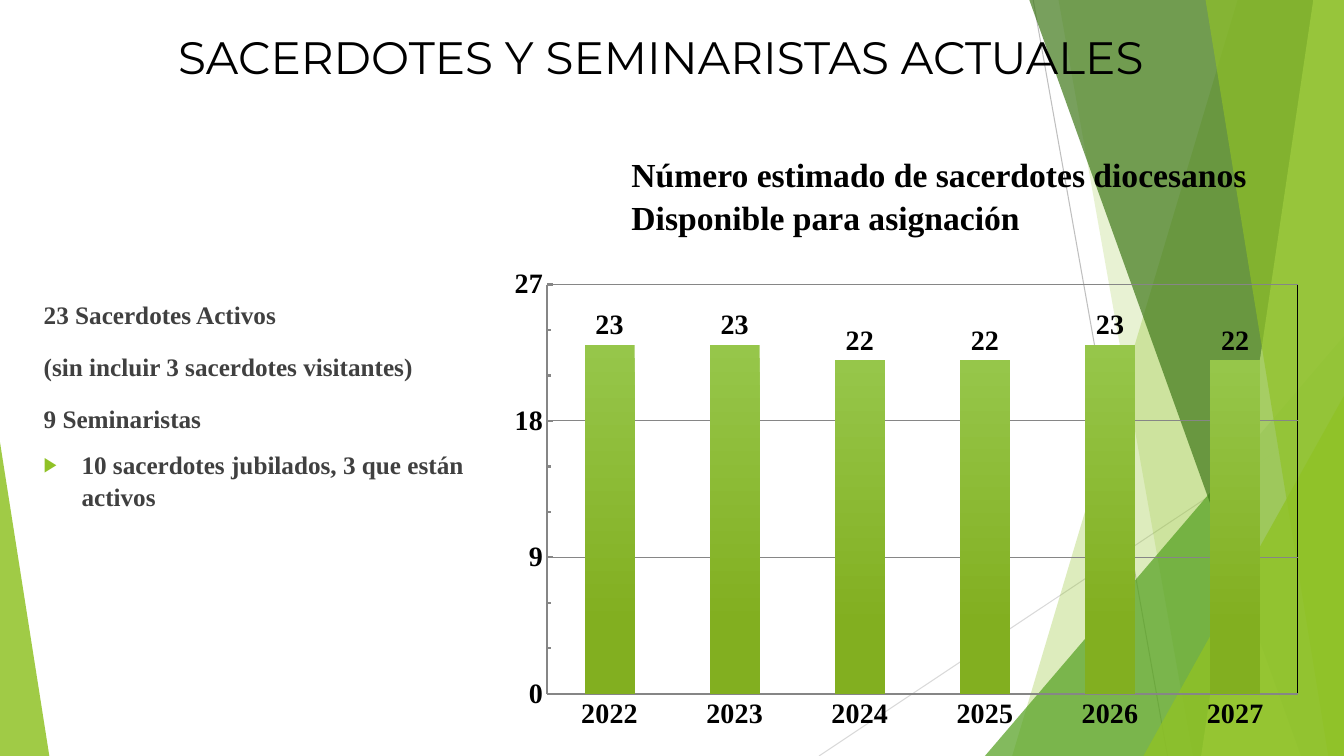
from lxml import etree
from pptx import Presentation
from pptx.chart.data import CategoryChartData
from pptx.dml.color import RGBColor
from pptx.enum.chart import XL_CHART_TYPE as ChartType, XL_LABEL_POSITION as LabelPos, XL_TICK_MARK as Tick
from pptx.enum.shapes import MSO_CONNECTOR as Connector, MSO_SHAPE as Preset
from pptx.enum.text import MSO_ANCHOR as Anchor, MSO_AUTO_SIZE as AutoSize, PP_ALIGN as Align
from pptx.oxml import parse_xml
from pptx.oxml.ns import nsdecls, qn
from pptx.util import Emu, Pt

PX = 9525  # EMU per px, slide is 1280 x 720 px
WIDTH, HEIGHT = 1280, 720

BLACK = RGBColor(0x00, 0x00, 0x00)
TEXT_GREY = RGBColor(0x40, 0x40, 0x40)
GRID_GREY = RGBColor(0x86, 0x86, 0x86)
LINE_GREY = RGBColor(0xBF, 0xBF, 0xBF)
PALE_GREY = RGBColor(0xD9, 0xD9, 0xD9)
LIME = RGBColor(0x90, 0xC2, 0x26)
PALE_LIME = RGBColor(0xC0, 0xE4, 0x74)
GREEN = RGBColor(0x54, 0xA0, 0x21)
DARK_GREEN = RGBColor(0x3F, 0x78, 0x19)
BAR_TOP = RGBColor(0x96, 0xC6, 0x4A)
BAR_BOTTOM = RGBColor(0x82, 0xAF, 0x20)
SERIF, SANS, CHART_FONT = "Times New Roman", "Montserrat", "Roboto"

# Content
TITLE = "SACERDOTES Y SEMINARISTAS ACTUALES"
FACTS = ["23 Sacerdotes Activos", "(sin incluir 3 sacerdotes visitantes)", "9 Seminaristas"]
BULLET_FACT = "10 sacerdotes jubilados, 3 que están activos"
CHART_HEADING = ["Número estimado de sacerdotes diocesanos", "Disponible para asignación"]
PRIESTS = {"2022": 23, "2023": 23, "2024": 22, "2025": 22, "2026": 23, "2027": 22}

# Places: left, top, width, height
TITLE_BOX = (160, 23, 960, 84)
FACTS_BOX = (32, 278, 421, 313)
HEADING_BOX = (592, 139, 619, 126)
CHART_BOX = (474, 248, 777, 456)
PLOT_BOX = (521, 271, 715, 390)

# Background: thin lines, bands (top left, bottom left) and triangles (box, apex)
THIN_LINES = [((984, 0), (1112, HEIGHT), LINE_GREY), ((WIDTH, 387), (780, HEIGHT), PALE_GREY)]
FACETS = [
    ("band", (1179, 964), LIME, 30),
    ("band", (1008, 1136), LIME, 20),
    ("triangle", (938, 320, 342, 400, 1), GREEN, 72),
    ("band", (980, 1239), DARK_GREEN, 70),
    ("band", (1251, 1144), PALE_LIME, 70),
    ("band", (1148, 1265), LIME, 65),
    ("triangle", (1089, 377, 191, 343, 1), LIME, 80),
    ("triangle", (0, 421, 47, 299, 0), LIME, 85),
]


def px(*lengths):
    return [Emu(length * PX) for length in lengths]


def place(box, bounds):
    box.left, box.top, box.width, box.height = px(*bounds)


def style(font, size, color, name=SERIF, bold=True):
    font.size, font.name, font.bold = Pt(size), name, bold
    font.color.rgb = color


def write(frame, lines, size, color, name=SERIF, bold=True):
    for number, line in enumerate(lines):
        para = frame.add_paragraph() if number else frame.paragraphs[0]
        para.alignment = Align.LEFT
        span = para.add_run()
        span.text = line
        style(span.font, size, color, name, bold)


def add_facet(page, kind, points, color, opacity):
    if kind == "band":
        top_left, bottom_left = points
        builder = page.shapes.build_freeform(top_left, -1, scale=PX)
        builder.add_line_segments([(WIDTH, -1), (WIDTH, HEIGHT), (bottom_left, HEIGHT)], close=True)
        shape = builder.convert_to_shape()
    else:
        *bounds, apex = points
        shape = page.shapes.add_shape(Preset.ISOSCELES_TRIANGLE, *px(*bounds))
        shape.adjustments[0] = apex
    shape.shadow.inherit = False
    shape.line.fill.background()
    shape.fill.solid()
    shape.fill.fore_color.rgb = color
    tint = shape.element.spPr.find(".//" + qn("a:srgbClr"))
    etree.SubElement(tint, qn("a:alpha")).set("val", str(opacity * 1000))


def set_bullet(para, indent):
    props = para._p.get_or_add_pPr()
    props.set("marL", str(indent * PX))
    props.set("indent", str(-indent * PX))
    for item in (f'<a:buClr {nsdecls("a")}><a:srgbClr val="{LIME}"/></a:buClr>',
                 f'<a:buSzPct {nsdecls("a")} val="80000"/>',
                 f'<a:buChar {nsdecls("a")} char="▶"/>'):
        props.append(parse_xml(item))


def clear_bullet(para):
    props = para._p.get_or_add_pPr()
    props.set("marL", "0")
    props.set("indent", "0")
    etree.SubElement(props, qn("a:buNone"))


def fix_plot_area(chart):
    area = chart._chartSpace.find(".//" + qn("c:plotArea"))
    for old in area.findall(qn("c:layout")):
        area.remove(old)
    left, top, width, height = CHART_BOX
    x, y, w, h = PLOT_BOX
    shares = {"x": (x - left) / width, "y": (y - top) / height, "w": w / width, "h": h / height}
    sizes = "".join(f'<c:{key} val="{share:.4f}"/>' for key, share in shares.items())
    area.insert(0, parse_xml(
        f'<c:layout {nsdecls("c")}><c:manualLayout><c:layoutTarget val="inner"/>'
        f'<c:xMode val="edge"/><c:yMode val="edge"/>{sizes}</c:manualLayout></c:layout>'))
    area.append(parse_xml(
        f'<c:spPr {nsdecls("c", "a")}><a:noFill/><a:ln w="9525"><a:solidFill>'
        f'<a:srgbClr val="{BLACK}"/></a:solidFill></a:ln></c:spPr>'))


def add_priest_chart(page):
    data = CategoryChartData()
    data.categories = list(PRIESTS)
    data.add_series("Series 1", list(PRIESTS.values()))
    chart = page.shapes.add_chart(ChartType.COLUMN_CLUSTERED, *px(*CHART_BOX), data).chart
    chart.has_legend = chart.has_title = False
    style(chart.font, 10, BLACK, CHART_FONT, False)

    # Axes
    years, counts = chart.category_axis, chart.value_axis
    for axis in (years, counts):
        style(axis.tick_labels.font, 20, BLACK)
        axis.format.line.color.rgb = GRID_GREY
        axis.format.line.width = Pt(1.5)
    years.major_tick_mark = years.minor_tick_mark = Tick.NONE
    counts.major_tick_mark = counts.minor_tick_mark = Tick.INSIDE
    counts.minimum_scale, counts.maximum_scale = 0, 27
    counts.major_unit, counts.minor_unit = 9, 3
    counts.has_major_gridlines = True
    counts.major_gridlines.format.line.color.rgb = GRID_GREY
    counts.major_gridlines.format.line.width = Pt(0.75)

    # Columns and their labels
    plot = chart.plots[0]
    plot.gap_width, plot.vary_by_categories = 150, False
    fill = plot.series[0].format.fill
    fill.gradient()
    fill.gradient_angle = 270
    for stop, color, position in zip(fill.gradient_stops, (BAR_TOP, BAR_BOTTOM), (0, 0.8)):
        stop.color.rgb, stop.position = color, position
    labels = plot.series[0].data_labels
    labels.show_value, labels.position = True, LabelPos.OUTSIDE_END
    style(labels.font, 20, BLACK)
    fix_plot_area(chart)


def main():
    deck = Presentation()
    deck.slide_width, deck.slide_height = px(WIDTH, HEIGHT)
    page = deck.slides.add_slide(deck.slide_layouts[1])
    title, facts = page.shapes.title, page.placeholders[1]

    # Background
    for start, end, color in THIN_LINES:
        line = page.shapes.add_connector(Connector.STRAIGHT, *px(*start, *end))
        line.line.color.rgb, line.line.width = color, Pt(0.75)
        etree.SubElement(line.element.spPr, qn("a:effectLst"))
    for facet in FACETS:
        add_facet(page, *facet)

    # Title and facts, in front of the background
    for box, bounds in ((title, TITLE_BOX), (facts, FACTS_BOX)):
        place(box, bounds)
        box.text_frame.vertical_anchor = Anchor.TOP
        box.text_frame.auto_size = AutoSize.NONE
        box.element.getparent().append(box.element)
    write(title.text_frame, [TITLE], 32.4, BLACK, SANS, False)
    write(facts.text_frame, FACTS + [BULLET_FACT], 18, TEXT_GREY)
    *plain, bulleted = facts.text_frame.paragraphs
    for para in plain:
        para.space_before, para.line_spacing = Pt(14), 1.07
        clear_bullet(para)
    bulleted.space_before, bulleted.line_spacing = Pt(10), 1.07
    set_bullet(bulleted, 36)

    # Chart with its heading
    heading = page.shapes.add_textbox(*px(*HEADING_BOX)).text_frame
    heading.word_wrap = True
    write(heading, CHART_HEADING, 24, BLACK)
    for para in heading.paragraphs:
        para.line_spacing = 1.07
    add_priest_chart(page)
    deck.save("out.pptx")


if __name__ == "__main__":
    main()
